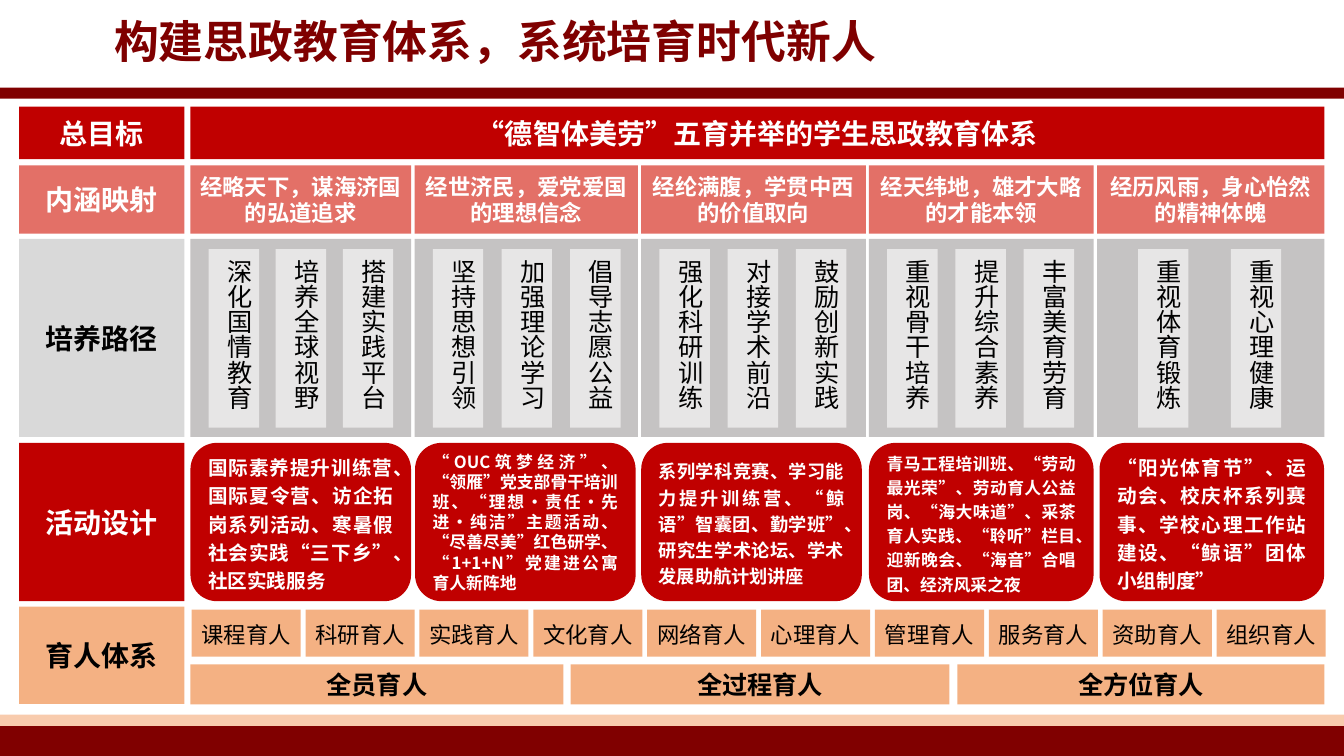
"""Build a one-slide chart of a university's civic education system."""
from dataclasses import dataclass

from pptx import Presentation
from pptx.dml.color import RGBColor
from pptx.enum.lang import MSO_LANGUAGE_ID as Lang
from pptx.enum.shapes import MSO_SHAPE as Kind
from pptx.enum.text import MSO_ANCHOR as Anchor, MSO_AUTO_SIZE as Fit, PP_ALIGN as Align
from pptx.oxml.ns import qn
from pptx.shapes.autoshape import Shape
from pptx.slide import Slide
from pptx.util import Cm, Pt

FONT = "Noto Sans CJK SC"
WHITE = RGBColor(0xFF, 0xFF, 0xFF)
BLACK = RGBColor(0x00, 0x00, 0x00)
MAROON = RGBColor(0x80, 0x00, 0x00)
WINE = RGBColor(0x7F, 0x00, 0x00)
RED = RGBColor(0xC0, 0x00, 0x00)
CORAL = RGBColor(0xE3, 0x70, 0x67)
PEACH = RGBColor(0xF8, 0xCB, 0xAD)
ORANGE = RGBColor(0xF4, 0xB1, 0x83)
PALE = RGBColor(0xD9, 0xD9, 0xD9)
GRAY = RGBColor(0xC5, 0xC3, 0xC3)
LIGHT = RGBColor(0xE7, 0xE6, 0xE6)

LEFT, LABEL_W = 0.48, 4.17
MAIN_X, MAIN_W = 4.8, 28.58
GOAL_Y, GOAL_H = 2.69, 1.32
THEME_Y, THEME_H = 4.17, 1.72
PATH_Y, PATH_H = 6.02, 4.99
CARD_Y, CARD_W, CARD_H = 6.28, 1.27, 4.5
ACT_Y, ACT_H = 11.16, 3.99
TAG_X, TAG_Y, TAG_W, TAG_H, TAG_STEP = 4.83, 15.36, 2.75, 1.19, 2.87
SCOPE_Y, SCOPE_H = 16.74, 1.01


@dataclass
class Box:
    x: float
    y: float
    w: float
    h: float
    fill: RGBColor
    kind: Kind = Kind.RECTANGLE


@dataclass
class Style:
    size: float
    color: RGBColor
    bold: bool = True
    align: Align = Align.CENTER
    space: float = 1.0


@dataclass
class Label:
    y: float
    h: float
    fill: RGBColor
    color: RGBColor
    text: str


@dataclass
class Column:
    x: float
    w: float
    theme: tuple[str, str]
    paths: tuple[str, ...]
    inset: float
    step: float
    act_x: float
    act_w: float
    act: str
    size: float
    space: float = 1.2


@dataclass
class Scope:
    x: float
    w: float
    text: str


LABELS = [
    Label(GOAL_Y, GOAL_H, RED, WHITE, "总目标"),
    Label(THEME_Y, THEME_H, CORAL, WHITE, "内涵映射"),
    Label(PATH_Y, PATH_H, PALE, BLACK, "培养路径"),
    Label(ACT_Y, ACT_H, RED, WHITE, "活动设计"),
    Label(15.29, 2.45, ORANGE, BLACK, "育人体系"),
]
COLUMNS = [
    Column(4.8, 5.56, ("经略天下，谋海济国", "的弘道追求"),
           ("深化国情教育", "培养全球视野", "搭建实践平台"), 0.46, 1.69, 4.8, 5.56,
           "国际素养提升训练营、国际夏令营、访企拓岗系列活动、寒暑假社会实践“三下乡”、社区实践服务", 14),
    Column(10.45, 5.63, ("经世济民，爱党爱国", "的理想信念"),
           ("坚持思想引领", "加强理论学习", "倡导志愿公益"), 0.46, 1.73, 10.46, 5.56,
           "“OUC筑梦经济”、“领雁”党支部骨干培训班、“理想·责任·先进·纯洁”主题活动、"
           "“尽善尽美”红色研学、“1+1+N”党建进公寓育人新阵地", 12, 1.0),
    Column(16.16, 5.66, ("经纶满腹，学贯中西", "的价值取向"),
           ("强化科研训练", "对接学术前沿", "鼓励创新实践"), 0.46, 1.72, 16.16, 5.56,
           "系列学科竞赛、学习能力提升训练营、“鲸语”智囊团、勤学班”、"
           "研究生学术论坛、学术发展助航计划讲座", 13),
    Column(21.9, 5.66, ("经天纬地，雄才大略", "的才能本领"),
           ("重视骨干培养", "提升综合素养", "丰富美育劳育"), 0.46, 1.72, 21.9, 5.66,
           "青马工程培训班、“劳动最光荣”、劳动育人公益岗、“海大味道”、采茶育人实践、"
           "“聆听”栏目、迎新晚会、“海音”合唱团、经济风采之夜", 12),
    Column(27.65, 5.73, ("经历风雨，身心怡然", "的精神体魄"),
           ("重视体育锻炼", "重视心理健康"), 1.03, 2.34, 27.71, 5.66,
           "“阳光体育节”、运动会、校庆杯系列赛事、学校心理工作站建设、“鲸语”团体小组制度”", 14),
]
TAGS = ["课程育人", "科研育人", "实践育人", "文化育人", "网络育人",
        "心理育人", "管理育人", "服务育人", "资助育人", "组织育人"]
SCOPES = [Scope(4.8, 9.4, "全员育人"), Scope(14.38, 9.55, "全过程育人"),
          Scope(24.13, 9.25, "全方位育人")]


def write(shape: Shape, lines: tuple[str, ...], style: Style) -> None:
    """Fill a shape with one styled paragraph per line."""
    frame = shape.text_frame
    frame.word_wrap = True
    for i, line in enumerate(lines):
        para = frame.add_paragraph() if i else frame.paragraphs[0]
        para.alignment = style.align
        para.line_spacing = style.space
        run = para.add_run()
        run.text = line
        font = run.font
        font.name, font.size, font.bold = FONT, Pt(style.size), style.bold
        font.color.rgb = style.color
        font.language_id = Lang.SIMPLIFIED_CHINESE
        east = run._r.get_or_add_rPr().makeelement(qn("a:ea"), {"typeface": FONT})
        run._r.rPr.find(qn("a:latin")).addnext(east)


def draw(slide: Slide, box: Box) -> Shape:
    """Draw a flat filled box."""
    shape = slide.shapes.add_shape(box.kind, Cm(box.x), Cm(box.y), Cm(box.w), Cm(box.h))
    shape.shadow.inherit = False
    shape.fill.solid()
    shape.fill.fore_color.rgb = box.fill
    shape.line.fill.background()
    return shape


def block(slide: Slide, box: Box, style: Style, *lines: str, slim: bool = False) -> None:
    """Draw a box with text in its middle."""
    shape = draw(slide, box)
    frame = shape.text_frame
    frame.vertical_anchor = Anchor.MIDDLE
    if slim:
        frame.margin_left = frame.margin_right = Cm(0.1)
    write(shape, lines, style)


def card(slide: Slide, x: float, text: str) -> None:
    """Draw a card with upright text."""
    shape = draw(slide, Box(x, CARD_Y, CARD_W, CARD_H, LIGHT))
    frame = shape.text_frame
    frame.vertical_anchor = Anchor.TOP
    frame.auto_size = Fit.SHAPE_TO_FIT_TEXT
    frame._txBody.bodyPr.set("vert", "eaVert")
    write(shape, (text,), Style(18, BLACK, False))


def head(slide: Slide, text: str) -> None:
    """Place and style the slide title."""
    title = slide.shapes.title
    title.left, title.top, title.width, title.height = Cm(2.62), Cm(0.36), Cm(23.44), Cm(1.42)
    title.text_frame.vertical_anchor = Anchor.TOP
    title.text_frame.auto_size = Fit.NONE
    write(title, (text,), Style(32, WINE, align=Align.LEFT, space=0.9))


def stack(slide: Slide, col: Column) -> None:
    """Draw one column: theme, paths and activities."""
    block(slide, Box(col.x, THEME_Y, col.w, THEME_H, CORAL), Style(16, WHITE), *col.theme, slim=True)
    draw(slide, Box(col.x, PATH_Y, col.w, PATH_H, GRAY))
    for i, text in enumerate(col.paths):
        card(slide, col.x + col.inset + i * col.step, text)
    block(slide, Box(col.act_x, ACT_Y, col.act_w, ACT_H, RED, Kind.ROUNDED_RECTANGLE),
          Style(col.size, WHITE, align=Align.JUSTIFY, space=col.space), col.act)


def main() -> None:
    """Build and save the slide."""
    deck = Presentation()
    deck.slide_width, deck.slide_height = Cm(33.87), Cm(19.05)
    slide = deck.slides.add_slide(deck.slide_layouts[5])
    for y, h, fill in ((18.16, 0.89, MAROON), (18.01, 0.28, PEACH), (2.21, 0.28, MAROON)):
        draw(slide, Box(0, y, 33.87, h, fill))
    head(slide, "构建思政教育体系，系统培育时代新人")
    for row in LABELS:
        block(slide, Box(LEFT, row.y, LABEL_W, row.h, row.fill), Style(20, row.color), row.text)
    block(slide, Box(MAIN_X, GOAL_Y, MAIN_W, GOAL_H, RED), Style(20, WHITE),
          "“德智体美劳”五育并举的学生思政教育体系")
    for col in COLUMNS:
        stack(slide, col)
    for i, tag in enumerate(TAGS):
        block(slide, Box(TAG_X + i * TAG_STEP, TAG_Y, TAG_W, TAG_H, ORANGE),
              Style(16, BLACK, False, space=1.1), tag, slim=True)
    for scope in SCOPES:
        block(slide, Box(scope.x, SCOPE_Y, scope.w, SCOPE_H, ORANGE), Style(18, BLACK), scope.text)
    deck.save("out.pptx")


if __name__ == "__main__":
    main()
